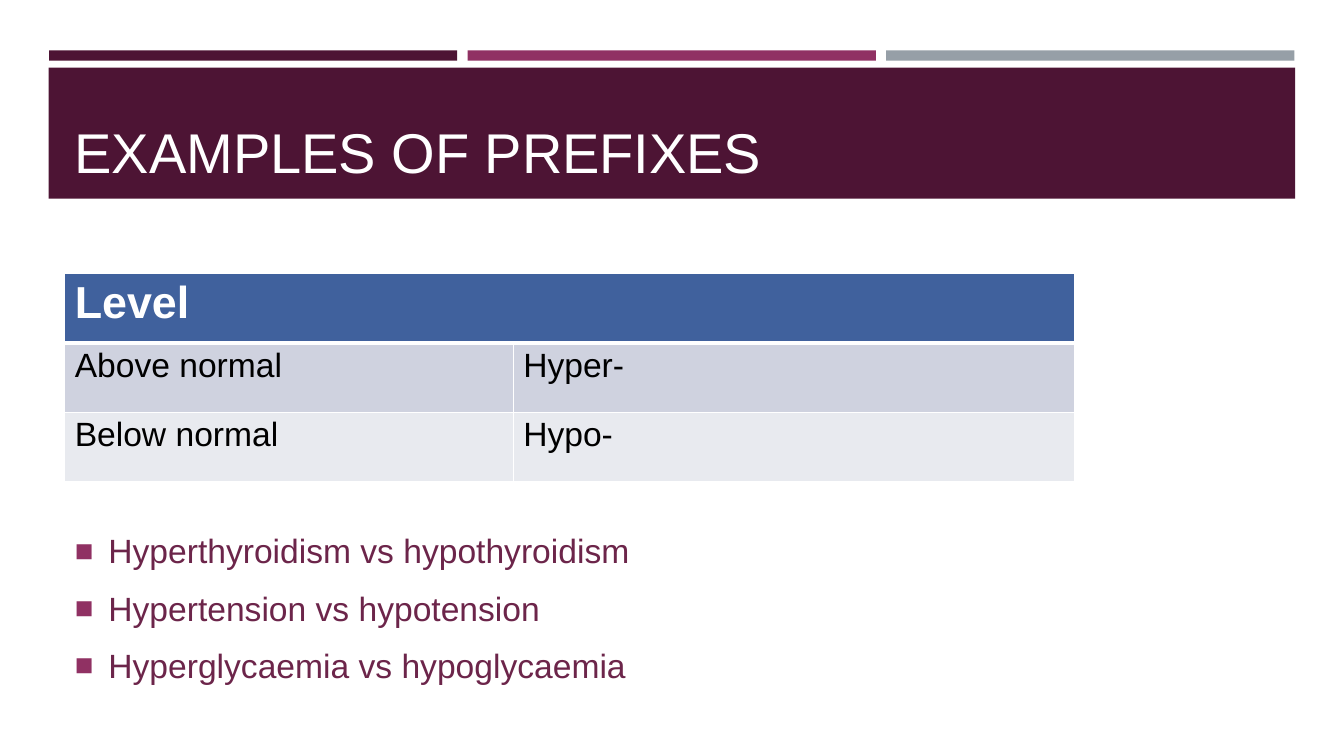
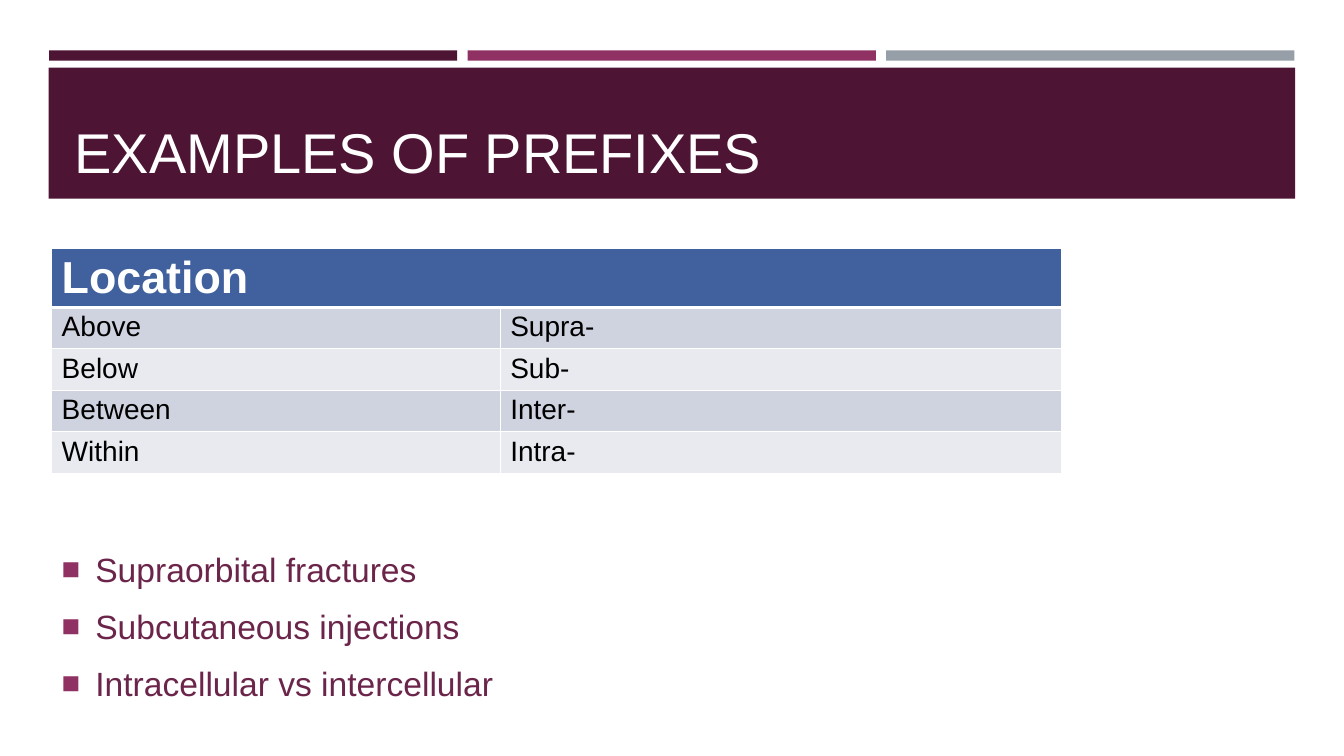
from dataclasses import dataclass

from lxml.etree import SubElement
from pptx import Presentation
from pptx.dml.color import RGBColor
from pptx.enum.shapes import MSO_SHAPE
from pptx.enum.text import MSO_ANCHOR, MSO_AUTO_SIZE, PP_ALIGN
from pptx.oxml import parse_xml
from pptx.oxml.ns import nsdecls, qn
from pptx.presentation import Presentation as PresentationType
from pptx.shapes.base import BaseShape
from pptx.slide import Slide
from pptx.table import _Cell
from pptx.text.text import _Paragraph
from pptx.util import Pt


@dataclass(frozen=True)
class Theme:
    font: str = "Arial"
    plum: str = "4D1434"
    magenta: str = "903163"
    grey: str = "969FA7"
    body_text: str = "6C254A"
    white: str = "FFFFFF"
    black: str = "000000"
    header_fill: str = "40619D"
    row_fills: tuple[str, str] = ("CFD2DF", "E8EAEF")
    title_size: float = 40
    body_size: float = 24
    header_size: float = 32


@dataclass(frozen=True)
class Box:
    left: float
    top: float
    width: float
    height: float


@dataclass(frozen=True)
class Band:
    box: Box
    color: str


@dataclass(frozen=True)
class PrefixSlide:
    heading: str
    rows: tuple[tuple[str, str], ...]
    row_size: float
    header_height: float
    row_height: float
    left: float
    table_top: float
    examples: tuple[str, ...]
    examples_top: float
    examples_height: float


THEME = Theme()
TITLE = "EXAMPLES OF PREFIXES"
TITLE_BOX = Box(46, 55.4, 868, 80)
COLUMN_WIDTHS = (320.4, 401)
EXAMPLES_WIDTH = 828
BULLET_INDENT = 24
BAR_LEFT, BAR_STEP = 35, 299

BANDS = [
    Band(Box(BAR_LEFT + index * BAR_STEP, 36, 291.6, 7.4), color)
    for index, color in enumerate((THEME.plum, THEME.magenta, THEME.grey))
] + [Band(Box(34.8, 48.4, 890.4, 93.6), THEME.plum)]

SLIDES = (
    PrefixSlide(
        heading="Level",
        rows=(("Above normal", "Hyper-"), ("Below normal", "Hypo-")),
        row_size=24,
        header_height=49.6,
        row_height=49.6,
        left=46.2,
        table_top=195.4,
        examples=(
            "Hyperthyroidism vs hypothyroidism",
            "Hypertension vs hypotension",
            "Hyperglycaemia vs hypoglycaemia",
        ),
        examples_top=376,
        examples_height=116,
    ),
    PrefixSlide(
        heading="Location",
        rows=(
            ("Above", "Supra-"),
            ("Below", "Sub-"),
            ("Between", "Inter-"),
            ("Within", "Intra-"),
        ),
        row_size=20,
        header_height=42,
        row_height=29.6,
        left=36.9,
        table_top=177.6,
        examples=(
            "Supraorbital fractures",
            "Subcutaneous injections",
            "Intracellular vs intercellular",
        ),
        examples_top=373,
        examples_height=148,
    ),
)


def place(shape: BaseShape, box: Box) -> None:
    shape.left, shape.top = Pt(box.left), Pt(box.top)
    shape.width, shape.height = Pt(box.width), Pt(box.height)


def set_font(paragraph: _Paragraph, size: float, color: str, bold: bool = False) -> None:
    paragraph.font.name = THEME.font
    paragraph.font.size = Pt(size)
    paragraph.font.bold = bold
    paragraph.font.color.rgb = RGBColor.from_string(color)


def add_bands_to_layout(slide: Slide) -> None:
    layout_tree = slide.slide_layout.shapes.element
    for index, band in enumerate(BANDS):
        box = band.box
        shape = slide.shapes.add_shape(
            MSO_SHAPE.RECTANGLE, Pt(box.left), Pt(box.top), Pt(box.width), Pt(box.height)
        )
        shape.shadow.inherit = False
        shape.fill.solid()
        shape.fill.fore_color.rgb = RGBColor.from_string(band.color)
        shape.line.fill.background()
        shape.element.find(f".//{qn('p:cNvPr')}").set("id", str(100 + index))
        layout_tree.insert(2 + index, shape.element)


def add_title(slide: Slide) -> None:
    title = slide.shapes.title
    place(title, TITLE_BOX)
    frame = title.text_frame
    frame.text = TITLE
    frame.word_wrap = True
    frame.auto_size = MSO_AUTO_SIZE.NONE
    frame.vertical_anchor = MSO_ANCHOR.BOTTOM
    paragraph = frame.paragraphs[0]
    paragraph.alignment = PP_ALIGN.LEFT
    set_font(paragraph, THEME.title_size, THEME.white)


def add_bullet(paragraph: _Paragraph) -> None:
    properties = paragraph._p.get_or_add_pPr()
    properties.set("marL", str(Pt(BULLET_INDENT)))
    properties.set("indent", str(-Pt(BULLET_INDENT)))
    color = SubElement(properties, qn("a:buClr"))
    SubElement(color, qn("a:srgbClr"), val=THEME.magenta)
    SubElement(properties, qn("a:buSzPct"), val="92000")
    SubElement(properties, qn("a:buFont"), typeface=THEME.font)
    SubElement(properties, qn("a:buChar"), char="■")


def add_examples(slide: Slide, content: PrefixSlide) -> None:
    body = slide.placeholders[1]
    place(body, Box(content.left, content.examples_top, EXAMPLES_WIDTH, content.examples_height))
    frame = body.text_frame
    frame.text = "\n".join(content.examples)
    frame.word_wrap = True
    frame.auto_size = MSO_AUTO_SIZE.NONE
    frame.vertical_anchor = MSO_ANCHOR.MIDDLE
    for index, paragraph in enumerate(frame.paragraphs):
        add_bullet(paragraph)
        paragraph.space_before = Pt(12 if index else 0)
        set_font(paragraph, THEME.body_size, THEME.body_text)


def set_borders(cell: _Cell, top: float, bottom: float) -> None:
    properties = cell._tc.get_or_add_tcPr()
    widths = {"lnL": 1, "lnR": 1, "lnT": top, "lnB": bottom}
    for index, (side, width) in enumerate(widths.items()):
        border = parse_xml(
            f'<a:{side} {nsdecls("a")} w="{Pt(width)}"><a:solidFill>'
            f'<a:srgbClr val="{THEME.white}"/></a:solidFill></a:{side}>'
        )
        properties.insert(index, border)


def fill_cell(cell: _Cell, text: str, row: int, row_size: float) -> None:
    is_header = row == 0
    cell.text = text
    cell.margin_top, cell.margin_bottom = Pt(3), Pt(2)
    cell.fill.solid()
    fill = THEME.header_fill if is_header else THEME.row_fills[(row - 1) % 2]
    cell.fill.fore_color.rgb = RGBColor.from_string(fill)
    set_borders(cell, top=3 if row == 1 else 1, bottom=3 if is_header else 1)
    set_font(
        cell.text_frame.paragraphs[0],
        THEME.header_size if is_header else row_size,
        THEME.white if is_header else THEME.black,
        bold=is_header,
    )


def add_prefix_table(slide: Slide, content: PrefixSlide) -> None:
    rows = ((content.heading, ""), *content.rows)
    heights = [content.header_height] + [content.row_height] * len(content.rows)
    table = slide.shapes.add_table(
        len(rows),
        len(COLUMN_WIDTHS),
        Pt(content.left),
        Pt(content.table_top),
        Pt(sum(COLUMN_WIDTHS)),
        Pt(sum(heights)),
    ).table
    for column, width in zip(table.columns, COLUMN_WIDTHS):
        column.width = Pt(width)
    for row_index, (texts, height) in enumerate(zip(rows, heights)):
        table.rows[row_index].height = Pt(height)
        for column_index, text in enumerate(texts):
            fill_cell(table.cell(row_index, column_index), text, row_index, content.row_size)
    table.cell(0, 0).merge(table.cell(0, 1))


def add_prefix_slide(presentation: PresentationType, content: PrefixSlide) -> Slide:
    slide = presentation.slides.add_slide(presentation.slide_layouts[1])
    add_title(slide)
    add_examples(slide, content)
    add_prefix_table(slide, content)
    return slide


def main() -> None:
    presentation = Presentation()
    presentation.slide_width, presentation.slide_height = Pt(960), Pt(540)
    slides = [add_prefix_slide(presentation, content) for content in SLIDES]
    add_bands_to_layout(slides[0])
    presentation.save("out.pptx")


if __name__ == "__main__":
    main()
